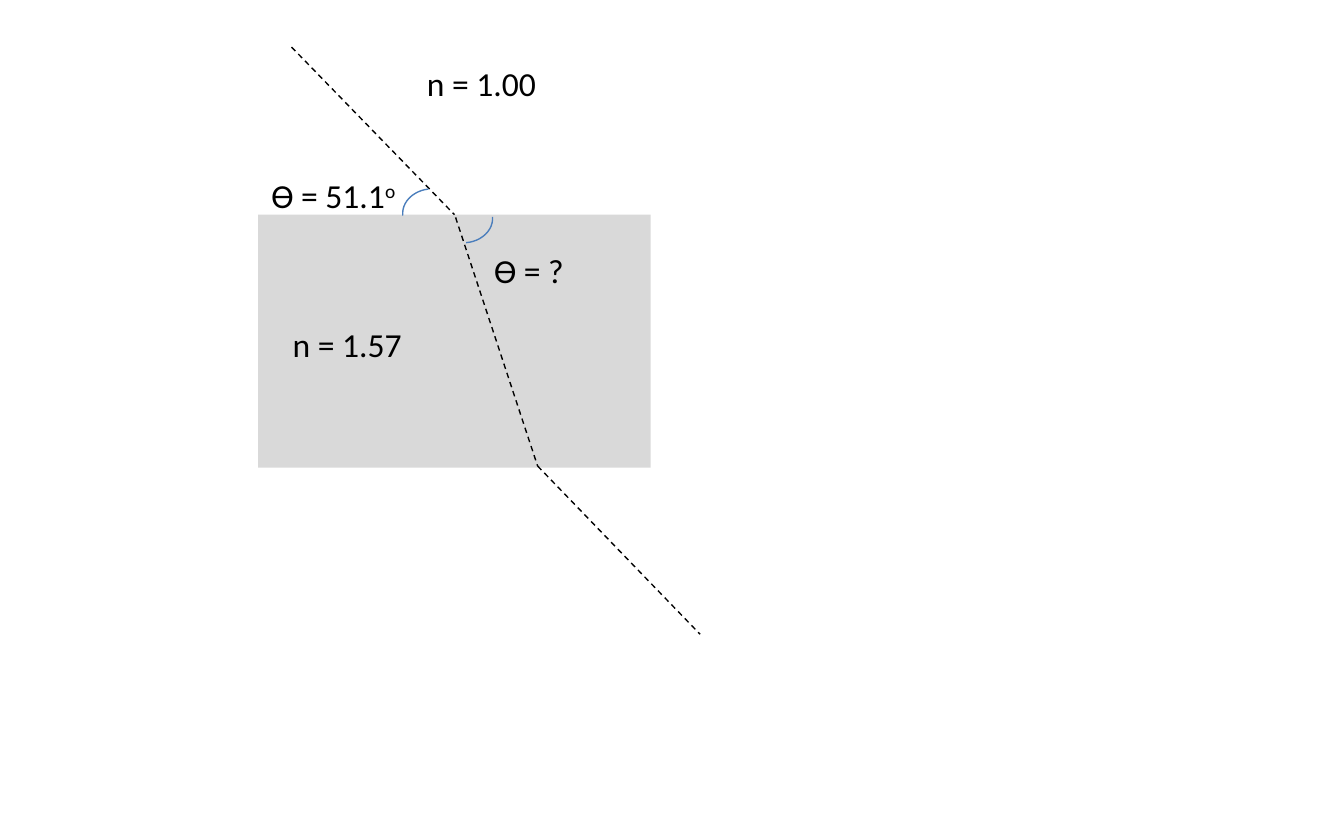
from lxml.etree import SubElement
from pptx import Presentation
from pptx.dml.color import RGBColor
from pptx.enum.dml import MSO_LINE
from pptx.enum.shapes import MSO_CONNECTOR, MSO_SHAPE
from pptx.enum.text import MSO_AUTO_SIZE
from pptx.oxml.ns import qn
from pptx.util import Cm, Pt

COLORS = {"glass": "D9D9D9", "arc": "4B7EBC", "ink": "000000"}
FONT = {"name": "Calibri", "size": Pt(18)}
FRAME = {"word_wrap": False, "auto_size": MSO_AUTO_SIZE.SHAPE_TO_FIT_TEXT}


def rgb(key):
    return RGBColor.from_string(COLORS[key])


def apply(obj, values):
    for name, value in values.items():
        setattr(obj, name, value)


class Diagram:
    def __init__(self, s):
        self.s = s
        self.line_width = Pt(0.75)

    def shape(self, kind, *box):
        sp = self.s.shapes.add_shape(kind, *map(Cm, box))
        sp.shadow.inherit = False
        return sp

    def block(self, *box):
        sp = self.shape(MSO_SHAPE.RECTANGLE, *box)
        sp.fill.solid()
        sp.fill.fore_color.rgb = rgb("glass")
        sp.line.fill.background()

    def angle_arc(self, x, y, rotation):
        sp = self.shape(MSO_SHAPE.ARC, x, y, 0.89, 1.07)
        sp.rotation = rotation
        sp.fill.background()
        sp.line.color.rgb = rgb("arc")
        sp.line.width = self.line_width

    def ray(self, start, end):
        c = self.s.shapes.add_connector(MSO_CONNECTOR.STRAIGHT, *map(Cm, start + end))
        c.line.color.rgb = rgb("ink")
        apply(c.line, {"width": self.line_width, "dash_style": MSO_LINE.DASH})
        SubElement(c._element.spPr, qn("a:effectLst"))

    def label(self, x, y, width, text, superscript=""):
        sp = self.s.shapes.add_textbox(Cm(x), Cm(y), Cm(width), Cm(1.03))
        tf = sp.text_frame
        apply(tf, FRAME)
        p = tf.paragraphs[0]
        for part in filter(None, (text, superscript)):
            r = p.add_run()
            r.text = part
            apply(r.font, FONT)
            r.font.color.rgb = rgb("ink")
        if superscript:
            r._r.get_or_add_rPr().set("baseline", "30000")


def main():
    prs = Presentation()
    prs.slide_width, prs.slide_height = Cm(25.4), Cm(15.88)
    d = Diagram(prs.slides.add_slide(prs.slide_layouts[6]))

    d.block(4.88, 4.06, 7.42, 4.78)
    d.ray((5.51, 0.89), (8.59, 4.06))
    d.ray((8.61, 4.11), (10.16, 8.81))
    d.ray((10.16, 8.81), (13.23, 11.99))
    d.angle_arc(7.7, 3.48, 263.8)
    d.angle_arc(8.33, 3.61, 85.6)
    d.label(5.28, 5.99, 2.74, "n = 1.57")
    d.label(7.82, 1.07, 2.74, "n = 1.00")
    d.label(4.88, 3.18, 2.92, "ϴ = 51.1", "o")
    d.label(9.09, 4.6, 1.85, "ϴ = ?")

    prs.save("out.pptx")


if __name__ == "__main__":
    main()
